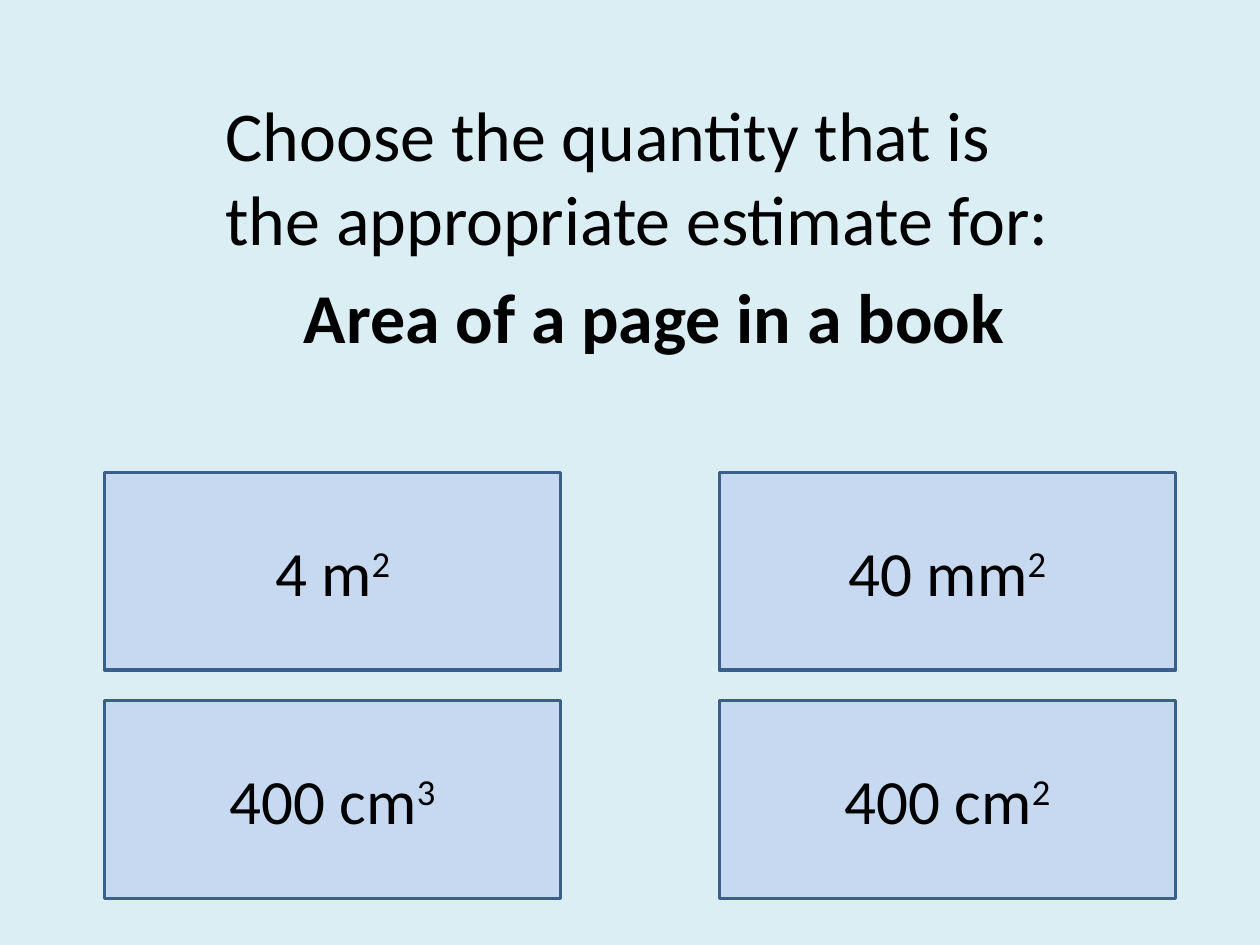
from dataclasses import dataclass

from pptx import Presentation
from pptx.dml.color import RGBColor
from pptx.enum.shapes import MSO_SHAPE
from pptx.enum.text import MSO_ANCHOR, MSO_AUTO_SIZE, PP_ALIGN
from pptx.slide import Slide
from pptx.util import Inches, Pt

BACKGROUND = RGBColor(0xDB, 0xEE, 0xF4)
CARD_FILL = RGBColor(0xC6, 0xD9, 0xF1)
CARD_LINE = RGBColor(0x3A, 0x5F, 0x8C)
BLACK = RGBColor(0, 0, 0)
FONT = "Calibri"

GRID_LEFT, GRID_TOP = 0.83, 3.75
COLUMN_STEP, ROW_STEP = 4.88, 1.81
CARD_WIDTH, CARD_HEIGHT = 3.62, 1.57


@dataclass(frozen=True)
class Answer:
    quantity: str
    exponent: str
    column: int
    row: int


ANSWERS = [
    Answer("4 m", "2", 0, 0),
    Answer("40 mm", "2", 1, 0),
    Answer("400 cm", "3", 0, 1),
    Answer("400 cm", "2", 1, 1),
]


def format_paragraph(paragraph, size: int, alignment: PP_ALIGN, bold: bool = False) -> None:
    paragraph.alignment = alignment
    font = paragraph.font
    font.name, font.size, font.bold = FONT, Pt(size), bold
    font.color.rgb = BLACK


def draw_question(slide: Slide) -> None:
    title = slide.shapes.title
    title.left, title.top = Inches(1.69), Inches(0.68)
    title.width, title.height = Inches(7), Inches(2.45)
    frame = title.text_frame
    frame.text = "Choose the quantity that is the appropriate estimate for:\nArea of a page in a book"
    frame.word_wrap = True
    frame.auto_size = MSO_AUTO_SIZE.NONE
    frame.vertical_anchor = MSO_ANCHOR.TOP
    prompt, subject = frame.paragraphs
    format_paragraph(prompt, 40, PP_ALIGN.LEFT)
    format_paragraph(subject, 40, PP_ALIGN.CENTER, bold=True)
    subject.space_before = Pt(8)


def draw_answer(slide: Slide, answer: Answer) -> None:
    card = slide.shapes.add_shape(
        MSO_SHAPE.RECTANGLE,
        Inches(GRID_LEFT + answer.column * COLUMN_STEP),
        Inches(GRID_TOP + answer.row * ROW_STEP),
        Inches(CARD_WIDTH),
        Inches(CARD_HEIGHT),
    )
    card.shadow.inherit = False
    card.fill.solid()
    card.fill.fore_color.rgb = CARD_FILL
    card.line.color.rgb = CARD_LINE
    card.line.width = Pt(2)
    card.text_frame.vertical_anchor = MSO_ANCHOR.MIDDLE
    paragraph = card.text_frame.paragraphs[0]
    format_paragraph(paragraph, 36, PP_ALIGN.CENTER)
    paragraph.add_run().text = answer.quantity
    superscript = paragraph.add_run()
    superscript.text = answer.exponent
    superscript._r.get_or_add_rPr().set("baseline", "30000")


def main() -> None:
    presentation = Presentation()
    presentation.slide_width, presentation.slide_height = Inches(10), Inches(7.5)
    slide = presentation.slides.add_slide(presentation.slide_layouts.get_by_name("Title Only"))
    slide.background.fill.solid()
    slide.background.fill.fore_color.rgb = BACKGROUND
    draw_question(slide)
    for answer in ANSWERS:
        draw_answer(slide, answer)
    presentation.save("out.pptx")


if __name__ == "__main__":
    main()
